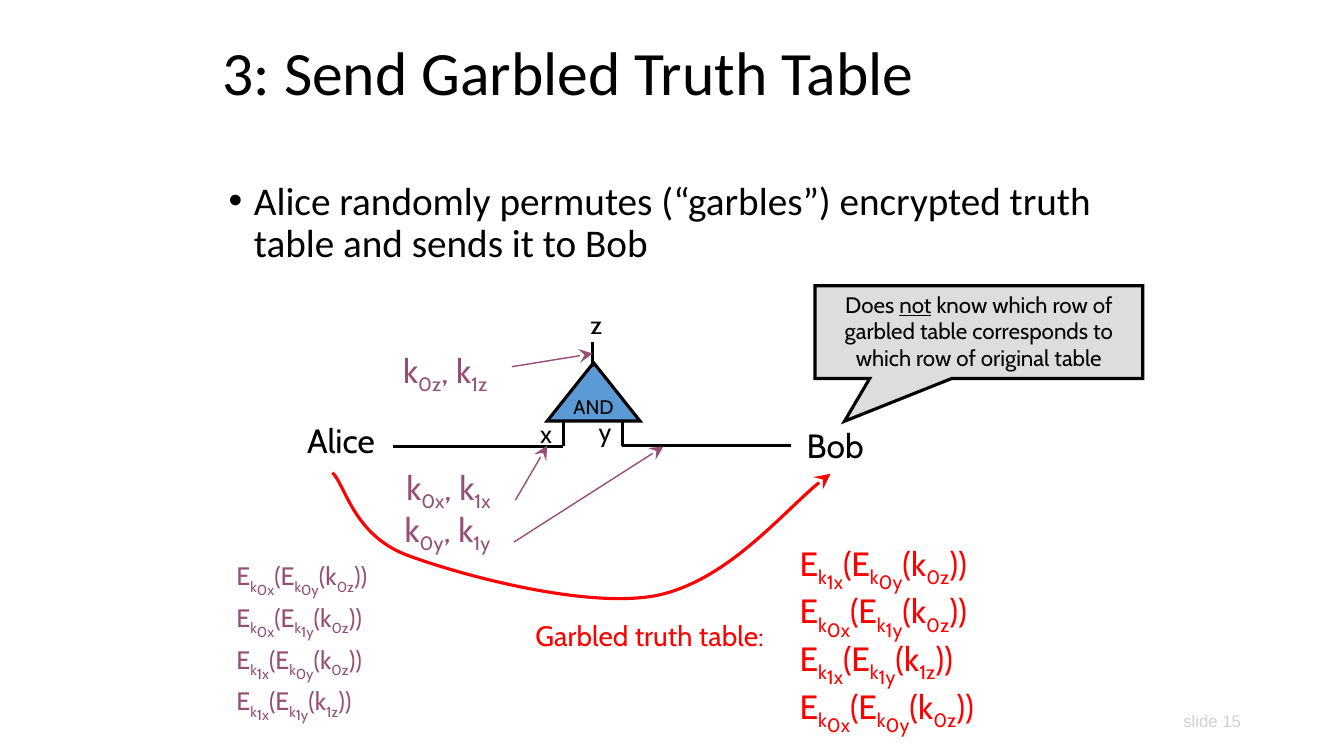
from lxml.etree import SubElement
from pptx import Presentation
from pptx.dml.color import RGBColor
from pptx.enum.shapes import MSO_CONNECTOR, MSO_SHAPE
from pptx.enum.text import MSO_ANCHOR, MSO_AUTO_SIZE, PP_ALIGN
from pptx.oxml.ns import qn
from pptx.util import Cm, Pt

COLORS = {
    "black": "000000",
    "key": "954F72",
    "garbled": "FF0000",
    "gate": "5B9BD5",
    "callout": "DDDDDD",
    "footer": "D0D0D0",
}


def color(name):
    return RGBColor.from_string(COLORS[name])


def write(paragraph, runs, size, color_name="black", font="Cabin"):
    """Fill a paragraph with (text, baseline percent) runs."""
    paragraph.font.size = Pt(size)
    paragraph.font.name = font
    paragraph.font.color.rgb = color(color_name)
    for text, baseline in runs:
        run = paragraph.add_run()
        run.text = text
        if baseline:
            run._r.get_or_add_rPr().set("baseline", str(baseline * 1000))


def add_text(slide, box, runs, size, color_name="black", font="Cabin", wrap=False):
    textbox = slide.shapes.add_textbox(*map(Cm, box))
    frame = textbox.text_frame
    frame.word_wrap = wrap
    if not wrap:
        frame.auto_size = MSO_AUTO_SIZE.SHAPE_TO_FIT_TEXT
    write(frame.paragraphs[0], runs, size, color_name, font)
    return frame


def style_line(shape, color_name, width, arrow=False):
    shape.line.color.rgb = color(color_name)
    shape.line.width = Pt(width)
    properties = shape._element.spPr
    line = properties.find(qn("a:ln"))
    SubElement(line, qn("a:miter"), lim="800000")
    if arrow:
        SubElement(line, qn("a:tailEnd"), type="stealth", w="lg", len="lg")
    if properties.find(qn("a:effectLst")) is None:
        SubElement(properties, qn("a:effectLst"))


def add_line(slide, start, end, color_name="black", width=2.25, arrow=False):
    connector = slide.shapes.add_connector(
        MSO_CONNECTOR.STRAIGHT, *map(Cm, start + end))
    style_line(connector, color_name, width, arrow)


def add_filled_shape(slide, kind, box, fill):
    shape = slide.shapes.add_shape(kind, *map(Cm, box))
    shape.shadow.inherit = False
    shape.fill.solid()
    shape.fill.fore_color.rgb = color(fill)
    style_line(shape, "black", 2.25)
    return shape


def add_title(slide, box):
    frame = add_text(slide, box, [("3: Send Garbled Truth Table", 0)], 44,
                     font="Calibri", wrap=True)
    frame.vertical_anchor = MSO_ANCHOR.MIDDLE
    frame.paragraphs[0].line_spacing = 0.9


def add_body(slide, box):
    sentence = ("Alice randomly permutes (“garbles”) encrypted truth "
                "table and sends it to Bob")
    frame = add_text(slide, box, [(sentence, 0)], 28, font="Calibri", wrap=True)
    paragraph = frame.paragraphs[0]
    paragraph.line_spacing = 0.9
    paragraph.space_before = Pt(10)
    properties = paragraph._p.get_or_add_pPr()
    properties.set("marL", str(Cm(0.64)))
    properties.set("indent", str(-Cm(0.64)))
    bullet_font = properties.makeelement(qn("a:buFont"), {"typeface": "Arial"})
    bullet = properties.makeelement(qn("a:buChar"), {"char": "•"})
    properties.find(qn("a:spcBef")).addnext(bullet_font)
    bullet_font.addnext(bullet)


def add_circuit(slide, left, top):
    """AND gate between Alice and Bob, with the key pair of each wire."""
    def at(x, y):
        return left + x, top + y

    gate = add_filled_shape(slide, MSO_SHAPE.ISOSCELES_TRIANGLE,
                            at(6.3, 1.47) + (2.34, 1.47), "gate")
    frame = gate.text_frame
    frame.word_wrap = False
    frame.vertical_anchor = MSO_ANCHOR.MIDDLE
    frame.paragraphs[0].alignment = PP_ALIGN.CENTER
    write(frame.paragraphs[0], [("AND", 0)], 14)

    wires = [
        ((6.71, 2.95), (6.71, 3.58)),
        ((8.2, 2.95), (8.2, 3.58)),
        ((7.45, 0.94), (7.45, 1.57)),
        ((6.69, 3.59), (2.41, 3.59)),
        ((12.45, 3.56), (8.18, 3.56)),
    ]
    for start, end in wires:
        add_line(slide, at(*start), at(*end))

    labels = [
        ("x", 5.87, 2.74, 0.81, 18),
        ("y", 7.35, 2.69, 0.84, 18),
        ("z", 7.14, 0, 0.79, 18),
        ("Alice", 0, 2.79, 2.24, 24),
        ("Bob", 12.59, 2.92, 1.96, 24),
    ]
    for text, x, y, width, size in labels:
        add_text(slide, at(x, y) + (width, size * 0.05), [(text, 0)], size)

    key_pairs = [
        ("z", (2.42, 1.01), 3, (5.41, 1.57), (7.45, 1.24)),
        ("x", (2.5, 3.96), 3.05, (5.5, 4.93), (6.3, 3.56)),
        ("y", (2.46, 5.03), 3.05, (5.46, 5.99), (9.23, 3.58)),
    ]
    for wire, place, width, start, end in key_pairs:
        runs = [("k", 0), (f"0{wire}", -25), (", k", 0), (f"1{wire}", -25)]
        add_text(slide, at(*place) + (width, 1.27), runs, 24, "key")
        add_line(slide, at(*start), at(*end), "key", 1, arrow=True)


def add_ciphertexts(slide, box, rows, step, size, color_name):
    """One double encryption per (x, y) input row; the key inside is for x AND y."""
    left, top, width, height = box
    for index, (x, y) in enumerate(rows):
        runs = [("E", 0), ("k", -25), (f"{x}x", -40),
                ("(E", 0), ("k", -25), (f"{y}y", -40),
                ("(k", 0), (f"{x & y}z", -25), ("))", 0)]
        add_text(slide, (left, top + index * step, width, height),
                 runs, size, color_name)


def add_sending_arrow(slide, left, top):
    """Curved arrow from Alice to Bob, made of three Bézier segments."""
    controls = [(0.33, 0.33), (0.53, 1.57), (1.88, 2.08),
                (3.25, 2.59), (6.38, 3.43), (8.15, 3.1),
                (9.93, 2.74), (11.63, 0.66), (12.55, 0.03)]
    builder = slide.shapes.build_freeform(Cm(left), Cm(top))
    builder.add_line_segments(
        [(Cm(left + x), Cm(top + y)) for x, y in controls], close=False)
    curve = builder.convert_to_shape()
    curve.shadow.inherit = False
    curve.fill.background()
    style_line(curve, "garbled", 2.25, arrow=True)

    outline = next(curve._element.iter(qn("a:path")))
    segments = outline.findall(qn("a:lnTo"))
    for first in range(0, len(segments), 3):
        bezier = SubElement(outline, qn("a:cubicBezTo"))
        for segment in segments[first:first + 3]:
            bezier.append(segment[0])
            outline.remove(segment)


def add_callout(slide, box):
    callout = add_filled_shape(slide, MSO_SHAPE.RECTANGULAR_CALLOUT, box, "callout")
    callout.adjustments[0] = -0.41
    callout.adjustments[1] = 0.96
    frame = callout.text_frame
    frame.word_wrap = True
    frame.vertical_anchor = MSO_ANCHOR.TOP
    paragraph = frame.paragraphs[0]
    paragraph.alignment = PP_ALIGN.CENTER
    write(paragraph, [("Does ", 0), ("not", 0), (
        " know which row of garbled table corresponds to "
        "which row of original table", 0)], 16)
    paragraph.runs[1].font.underline = True


def main():
    presentation = Presentation()
    presentation.slide_width = Cm(33.87)
    presentation.slide_height = Cm(19.05)
    slide = presentation.slides.add_slide(presentation.slide_layouts[6])

    add_title(slide, (5.36, 0.64, 23.42, 2.54))
    add_body(slide, (5.51, 4.45, 23.29, 13.97))
    add_circuit(slide, 7.49, 7.67)
    add_text(slide, (13.24, 15.45, 6.65, 1.09),
             [("Garbled truth table:", 0)], 20, "garbled")
    add_ciphertexts(slide, (5.71, 14, 4.24, 1.02),
                    [(0, 0), (0, 1), (1, 0), (1, 1)], 1.05, 18, "key")
    add_ciphertexts(slide, (19.9, 13.55, 5.49, 1.27),
                    [(1, 0), (0, 1), (1, 1), (0, 0)], 1.2, 24, "garbled")
    add_sending_arrow(slide, 8.38, 11.91)
    add_callout(slide, (20.54, 7.2, 8.26, 2.34))
    add_text(slide, (29.57, 17.78, 1.98, 0.76), [("slide 15", 0)], 12,
             "footer", "Arial")

    presentation.save("out.pptx")


if __name__ == "__main__":
    main()
